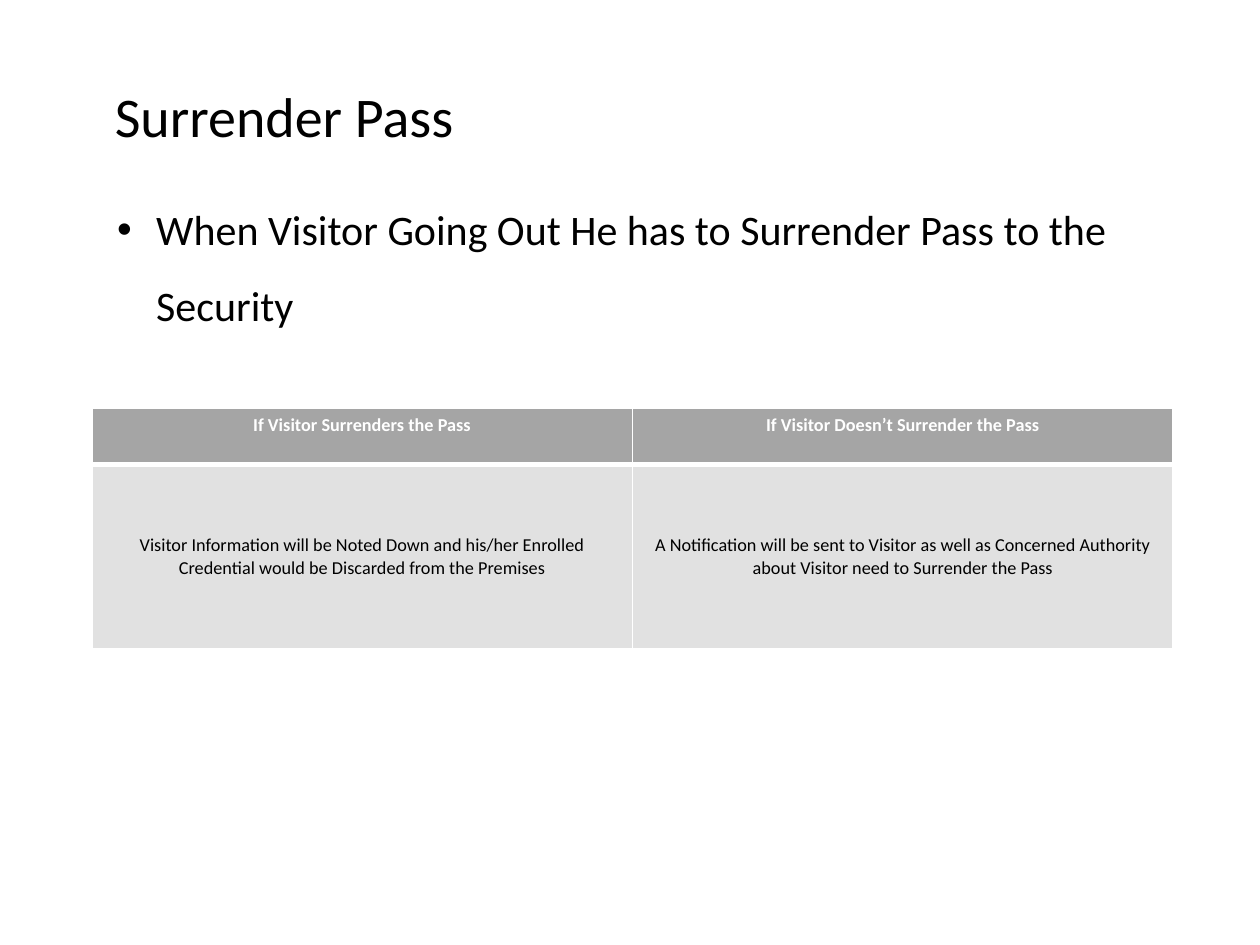
from dataclasses import dataclass

from lxml import etree
from pptx import Presentation
from pptx.dml.color import RGBColor
from pptx.enum.text import MSO_ANCHOR, PP_ALIGN
from pptx.oxml.ns import qn
from pptx.util import Cm, Pt

LEFT, CENTER = PP_ALIGN.LEFT, PP_ALIGN.CENTER
TOP, MIDDLE = MSO_ANCHOR.TOP, MSO_ANCHOR.MIDDLE


@dataclass(frozen=True)
class Theme:
    """Colours, font and type sizes of the slide."""
    face: str = "Calibri"
    ink: str = "000000"
    paper: str = "FFFFFF"
    head: str = "A5A5A5"
    body: str = "E1E1E1"
    title: float = 32
    point: float = 24
    cell: float = 10.4


THEME = Theme()


def style(para, size, color, align=LEFT, bold=False):
    """Set the font and alignment of a paragraph."""
    para.alignment = align
    font = para.font
    font.name, font.size, font.bold = THEME.face, Pt(size), bold
    font.color.rgb = RGBColor.from_string(color)


def add_title(slide, text):
    """Place and format the title."""
    title = slide.shapes.title
    title.left, title.top = Cm(2.06), Cm(1.52)
    title.width, title.height = Cm(17.58), Cm(1.63)
    title.text_frame.text = text
    title.text_frame.vertical_anchor = TOP
    style(title.text_frame.paragraphs[0], THEME.title, THEME.ink)


def add_point(slide, text):
    """Add a text box with one bulleted paragraph."""
    box = slide.shapes.add_textbox(Cm(2.11), Cm(3.48), Cm(21.79), Cm(6.4))
    frame = box.text_frame
    frame.word_wrap = True
    para = frame.paragraphs[0]
    para.text = text
    para.line_spacing = 1.5
    props = para._p.get_or_add_pPr()
    indent = Cm(0.79)
    props.set("marL", str(indent))
    props.set("indent", str(-indent))
    etree.SubElement(props, qn("a:buFont")).set("typeface", "Arial")
    etree.SubElement(props, qn("a:buChar")).set("char", "•")
    style(para, THEME.point, THEME.ink)


def add_edges(cell, widths):
    """Draw the cell borders, given a width in points for each side."""
    props = cell._tc.get_or_add_tcPr()
    for side, width in widths.items():
        line = etree.SubElement(props, qn(f"a:ln{side}"), w=str(Pt(width)))
        fill = etree.SubElement(line, qn("a:solidFill"))
        etree.SubElement(fill, qn("a:srgbClr"), val=THEME.paper)


def fill_cell(cell, text, head):
    """Write and format one header or body cell."""
    cell.text = text
    cell.vertical_anchor = TOP if head else MIDDLE
    add_edges(cell, {"L": 1, "R": 1, "T": 1 if head else 3, "B": 3 if head else 1})
    cell.fill.solid()
    cell.fill.fore_color.rgb = RGBColor.from_string(THEME.head if head else THEME.body)
    color = THEME.paper if head else THEME.ink
    style(cell.text_frame.paragraphs[0], THEME.cell, color, CENTER, head)


def add_grid(slide, rows, heights):
    """Add a table whose first row is the header."""
    count = len(rows[0])
    frame = slide.shapes.add_table(
        len(rows), count, Cm(1.85), Cm(8.23), Cm(10.9) * count, Cm(sum(heights)))
    table = frame.table
    for r, (texts, height) in enumerate(zip(rows, heights)):
        table.rows[r].height = Cm(height)
        for c, text in enumerate(texts):
            fill_cell(table.cell(r, c), text, r == 0)


def main():
    """Build the slide and save it."""
    deck = Presentation()
    deck.slide_width, deck.slide_height = Cm(25.4), Cm(19.05)
    slide = deck.slides.add_slide(deck.slide_layouts[5])
    add_title(slide, "Surrender Pass")
    add_point(slide, "When Visitor Going Out He has to Surrender Pass to the Security")
    add_grid(slide, [
        ("If Visitor Surrenders the Pass", "If Visitor Doesn’t Surrender the Pass"),
        ("Visitor Information will be Noted Down and his/her Enrolled "
         "Credential would be Discarded from the Premises",
         "A Notification will be sent to Visitor as well as Concerned Authority "
         "about Visitor need to Surrender the Pass"),
    ], (1.14, 3.71))
    deck.save("out.pptx")


if __name__ == "__main__":
    main()
